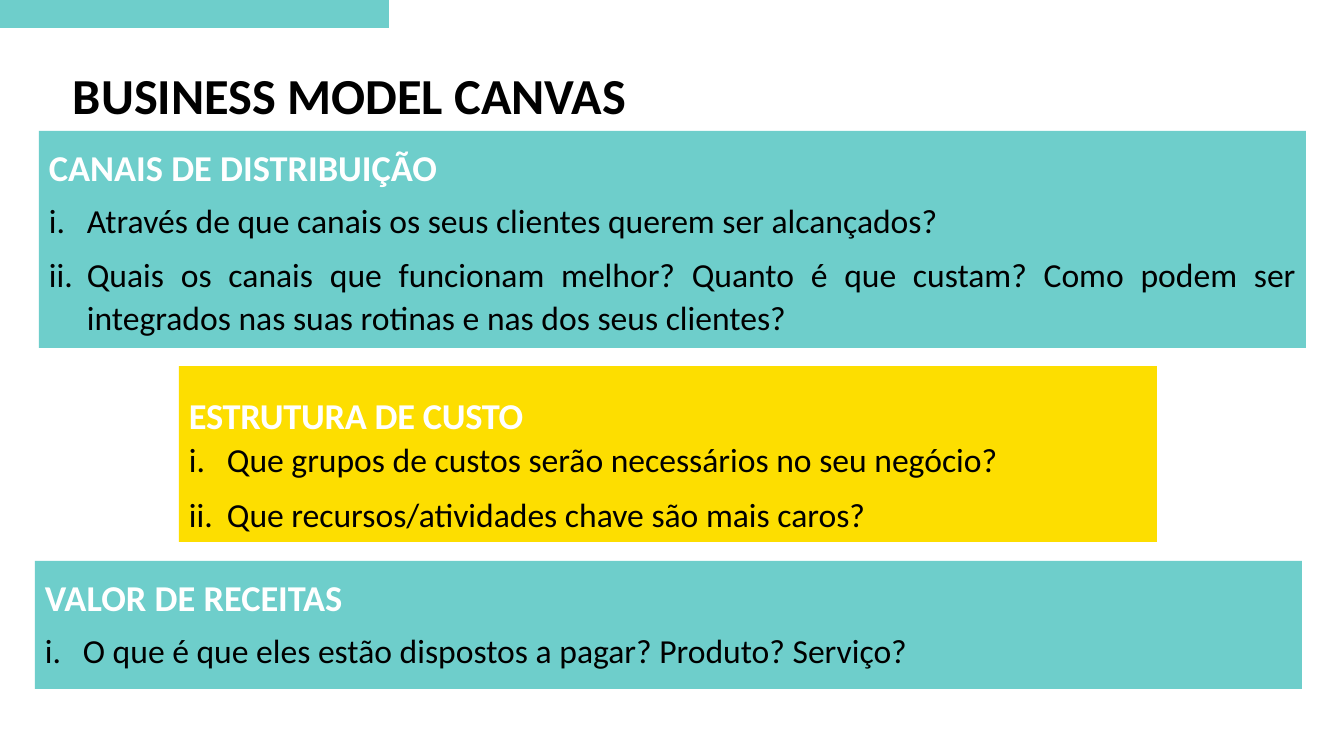
from lxml import etree
from pptx import Presentation
from pptx.dml.color import RGBColor
from pptx.enum.shapes import MSO_SHAPE
from pptx.enum.text import MSO_ANCHOR, PP_ALIGN
from pptx.oxml.ns import qn
from pptx.util import Emu, Pt

RECTANGLE = MSO_SHAPE.RECTANGLE
TOP = MSO_ANCHOR.TOP
LEFT, JUSTIFY = PP_ALIGN.LEFT, PP_ALIGN.JUSTIFY

TEAL = RGBColor(0x6E, 0xCE, 0xCB)
YELLOW = RGBColor(0xFD, 0xDE, 0x00)
WHITE = RGBColor(0xFF, 0xFF, 0xFF)
BLACK = RGBColor(0x00, 0x00, 0x00)

EMU_PER_PX = 914400 / 100.8


def px(length):
    return Emu(round(length * EMU_PER_PX))


class CanvasSlide:
    font_name = "Calibri"
    hanging = 38
    tab_stop = 50

    def __init__(self, deck):
        self.page = deck.slides.add_slide(deck.slide_layouts[6])

    def bar(self, left, top, width, height, color):
        box = self.page.shapes.add_shape(
            RECTANGLE, px(left), px(top), px(width), px(height))
        box.shadow.inherit = False
        box.fill.solid()
        box.fill.fore_color.rgb = color
        box.line.fill.background()
        return box

    def add_text(self, para, text, size, color, bold, spacing, after=0, align=LEFT):
        para.alignment = align
        para.line_spacing = spacing
        para.space_before = Pt(0)
        para.space_after = Pt(after)
        span = para.add_run()
        span.text = text
        span.font.name = self.font_name
        span.font.size = Pt(size)
        span.font.bold = bold
        span.font.color.rgb = color
        return span

    def number(self, para):
        properties = para._p.get_or_add_pPr()
        properties.set("marL", str(px(self.hanging)))
        properties.set("indent", str(-px(self.hanging)))
        etree.SubElement(properties, qn("a:buAutoNum"), type="romanLcPeriod")
        tabs = etree.SubElement(properties, qn("a:tabLst"))
        etree.SubElement(tabs, qn("a:tab"), pos=str(px(self.tab_stop)), algn="l")

    def title(self, left, top, width, height, text):
        box = self.page.shapes.add_textbox(
            px(left), px(top), px(width), px(height))
        box.text_frame.word_wrap = True
        self.add_text(box.text_frame.paragraphs[0], text, 36, BLACK, True, 0.9)

    def panel(self, left, top, width, height, color, heading, questions,
              spacing=1.2, after=6, tracking=0):
        frame = self.bar(left, top, width, height, color).text_frame
        frame.word_wrap = True
        frame.vertical_anchor = TOP
        span = self.add_text(
            frame.paragraphs[0], heading, 26, WHITE, True, spacing, after)
        if tracking:
            span._r.get_or_add_rPr().set("spc", str(tracking))
        for question in questions:
            para = frame.add_paragraph()
            self.number(para)
            self.add_text(para, question, 24, BLACK, False, 1.07, 8, JUSTIFY)


def main():
    deck = Presentation()
    deck.slide_width, deck.slide_height = px(1344), px(756)
    canvas = CanvasSlide(deck)
    canvas.bar(0, 0, 389, 28, TEAL)
    canvas.panel(35, 561, 1267, 128, TEAL, "VALOR DE RECEITAS", [
        "O que é que eles estão dispostos a pagar? Produto? Serviço?",
    ])
    canvas.title(63, 66, 1211, 119, "BUSINESS MODEL CANVAS")
    canvas.panel(39, 131, 1267, 217, TEAL, "CANAIS DE DISTRIBUIÇÃO", [
        "Através de que canais os seus clientes querem ser alcançados?",
        "Quais os canais que funcionam melhor? Quanto é que custam? "
        "Como podem ser integrados nas suas rotinas e nas dos seus clientes?",
    ])
    canvas.panel(179, 366, 978, 176, YELLOW, "ESTRUTURA DE CUSTO", [
        "Que grupos de custos serão necessários no seu negócio?",
        "Que recursos/atividades chave são mais caros?",
    ], spacing=1.5, after=0, tracking=-20)
    deck.save("out.pptx")


if __name__ == "__main__":
    main()
